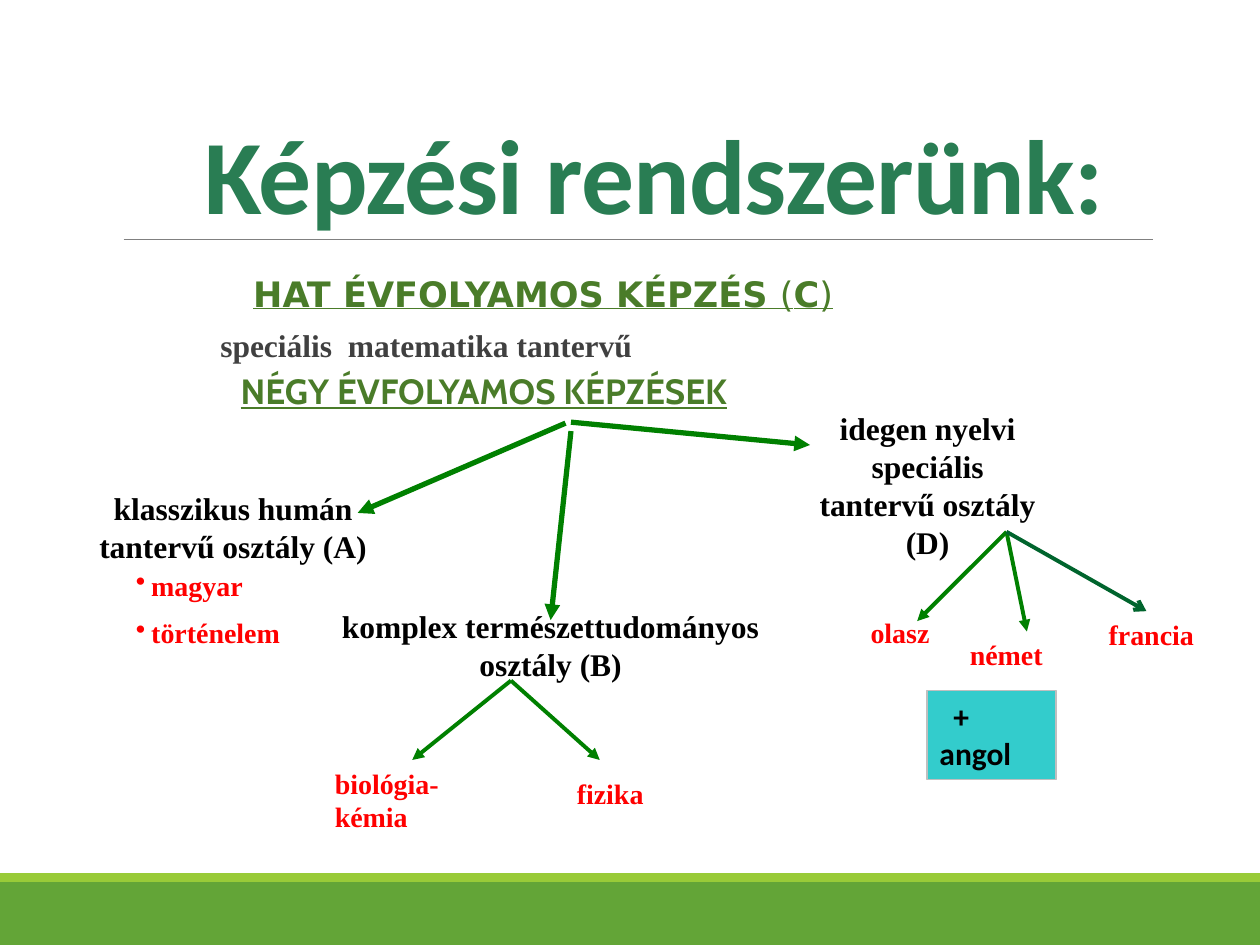
"""Build the slide that maps the school's training programmes."""
from typing import NamedTuple, Optional

from lxml.etree import SubElement
from pptx import Presentation
from pptx.dml.color import RGBColor as RGB
from pptx.enum.shapes import MSO_CONNECTOR as CONN, MSO_SHAPE as SHAPE
from pptx.enum.text import MSO_ANCHOR as ANCHOR, MSO_AUTO_SIZE as AUTO, PP_ALIGN as ALIGN
from pptx.oxml.ns import qn
from pptx.util import Cm, Pt

COLORS = {
    "footer": "63A537", "stripe": "99CB38", "rule": "808080", "title": "297D53",
    "heading": "4A7C29", "body": "404040", "class": "000000", "subject": "FF0000",
    "arrow": "008000", "dark_arrow": "00642D", "box": "33CCCC", "box_line": "BFBFBF",
}
SERIF = "Times New Roman"


class Box(NamedTuple):
    left: float
    top: float
    width: float
    height: float


class Label(NamedTuple):
    box: Box
    paragraphs: tuple
    style: dict


class Arrow(NamedTuple):
    start: tuple
    end: tuple
    width: float = 2.25
    color: str = "arrow"
    head: str = "triangle"


HEADING = dict(size=20, color="heading", underline=True)
CLASS = dict(size=18, color="class", align=ALIGN.CENTER)
SUBJECT = dict(size=16, color="subject")
BULLETS = dict(SUBJECT, bullet="•", margin=0.31, indent=-0.31, before=8)

LABELS = [
    Label(Box(4.6, 5.36, 12.7, 1.12), ("HAT ÉVFOLYAMOS KÉPZÉS |(|C|)",),
          dict(HEADING, font="DejaVu Sans", align=ALIGN.CENTER)),
    Label(Box(4.6, 7.32, 12.7, 1.12), ("NÉGY ÉVFOLYAMOS KÉPZÉSEK",),
          dict(HEADING, font="Cabin")),
    Label(Box(1.7, 9.73, 6, 1.78), ("klasszikus humán tantervű osztály (A)",), CLASS),
    Label(Box(6.5, 12.12, 9.2, 1.8), ("komplex természettudományos osztály (B)",), CLASS),
    Label(Box(16.1, 8.13, 5.2, 3.33), ("idegen nyelvi speciális tantervű osztály (D)",), CLASS),
    Label(Box(2.49, 11.33, 4, 1.96), ("magyar", "történelem"), BULLETS),
    Label(Box(6.5, 15.32, 3.8, 1.63), ("biológia-kémia",), SUBJECT),
    Label(Box(11.38, 15.52, 2.6, 0.94), ("fizika",), SUBJECT),
    Label(Box(17.3, 12.29, 3.6, 0.94), ("olasz",), SUBJECT),
    Label(Box(19.3, 12.73, 3, 0.94), ("német",), SUBJECT),
    Label(Box(22.1, 12.32, 2.6, 0.94), ("francia",), SUBJECT),
]

CLASS_B, CLASS_D = (10.3, 13.72), (20.29, 10.72)
ARROWS = [
    Arrow((11.4, 8.53), (7.21, 10.34), 3),
    Arrow((11.51, 8.69), (11.1, 12.5), 3),
    Arrow((11.51, 8.51), (16.33, 8.97), 3),
    Arrow(CLASS_B, (8.31, 15.32)),
    Arrow(CLASS_B, (12.09, 15.32)),
    Arrow(CLASS_D, (18.49, 12.52)),
    Arrow(CLASS_D, (20.7, 12.73)),
    Arrow(CLASS_D, (23.11, 12.32), color="dark_arrow", head="arrow"),
]


def rgb(name: str) -> RGB:
    """Return the named colour."""
    return RGB.from_string(COLORS[name])


def write(sp, *paragraphs: str, size: float, color: str, font: str = SERIF,
          underline: bool = False, align=ALIGN.LEFT, anchor=ANCHOR.TOP,
          auto=AUTO.SHAPE_TO_FIT_TEXT, bullet: str = "", margin: float = 0,
          indent: float = 0, before: float = 0, spacing: float = 1, tracking: int = 0) -> None:
    """Fill a shape with paragraphs whose parts, split by bars, alternate bold and regular."""
    tf = sp.text_frame
    tf.word_wrap, tf.auto_size, tf.vertical_anchor = True, auto, anchor
    for i, text in enumerate(paragraphs):
        p = tf.add_paragraph() if i else tf.paragraphs[0]
        p.alignment, p.line_spacing, p.space_before = align, spacing, Pt(before)
        ppr = p._p.get_or_add_pPr()
        ppr.set("marL", str(Cm(margin)))
        ppr.set("indent", str(Cm(indent)))
        if bullet:
            SubElement(ppr, qn("a:buChar")).set("char", bullet)
        else:
            SubElement(ppr, qn("a:buNone"))
        for j, part in enumerate(text.split("|")):
            r = p.add_run()
            r.text = part
            f = r.font
            f.name, f.size, f.bold, f.underline = font, Pt(size), j % 2 == 0, underline
            f.color.rgb = rgb(color)
            if tracking:
                r._r.get_or_add_rPr().set("spc", str(tracking))


def place(sp, box: Box) -> None:
    """Move and size a shape."""
    sp.left, sp.top, sp.width, sp.height = map(Cm, box)


def add_rect(s, box: Box, fill: str, line: Optional[str] = None):
    """Add a flat rectangle."""
    sp = s.shapes.add_shape(SHAPE.RECTANGLE, *map(Cm, box))
    sp.shadow.inherit = False
    sp.fill.solid()
    sp.fill.fore_color.rgb = rgb(fill)
    if line:
        sp.line.color.rgb, sp.line.width = rgb(line), Pt(0.75)
    else:
        sp.line.fill.background()
    return sp


def add_line(s, arrow: Arrow) -> None:
    """Add a straight line with an optional arrowhead."""
    sp = s.shapes.add_connector(CONN.STRAIGHT, *map(Cm, arrow.start + arrow.end))
    sp.line.color.rgb, sp.line.width = rgb(arrow.color), Pt(arrow.width)
    if arrow.head:
        SubElement(sp.line._get_or_add_ln(), qn("a:tailEnd")).set("type", arrow.head)
    SubElement(sp._element.spPr, qn("a:effectLst"))


def add_label(s, label: Label) -> None:
    """Add a text box."""
    sp = s.shapes.add_textbox(*map(Cm, label.box))
    write(sp, *label.paragraphs, **label.style)


def main() -> None:
    """Draw and save the slide."""
    prs = Presentation()
    prs.slide_width, prs.slide_height = Cm(25.4), Cm(19.05)
    s = prs.slides.add_slide(prs.slide_layouts[1])
    for sp in list(s.placeholders)[2:]:
        sp._element.getparent().remove(sp._element)

    add_rect(s, Box(0, 17.78, 25.4, 1.27), "footer")
    add_rect(s, Box(0, 17.6, 25.4, 0.18), "stripe")
    add_line(s, Arrow((2.49, 4.83), (23.24, 4.83), 0.5, "rule", ""))

    title, body = s.shapes.title, s.placeholders[1]
    place(title, Box(2.49, 2.92, 21.1, 1.96))
    write(title, "Képzési rendszerünk:", size=60.3, color="title", font="Calibri",
          anchor=ANCHOR.BOTTOM, auto=AUTO.NONE, margin=1.37, spacing=0.85, tracking=-50)
    place(body, Box(3.91, 6.6, 10.77, 1.22))
    body.text_frame.margin_left = body.text_frame.margin_right = 0
    write(body, "speciális  matematika tantervű", size=18, color="body",
          auto=AUTO.NONE, margin=0.53, before=12, spacing=0.8)

    for label in LABELS:
        add_label(s, label)
    for arrow in ARROWS:
        add_line(s, arrow)
    english = add_rect(s, Box(18.69, 13.92, 2.6, 1.8), "box", "box_line")
    write(english, "+ angol", size=18, color="class", font="Calibri", indent=0.28)
    prs.save("out.pptx")


if __name__ == "__main__":
    main()
